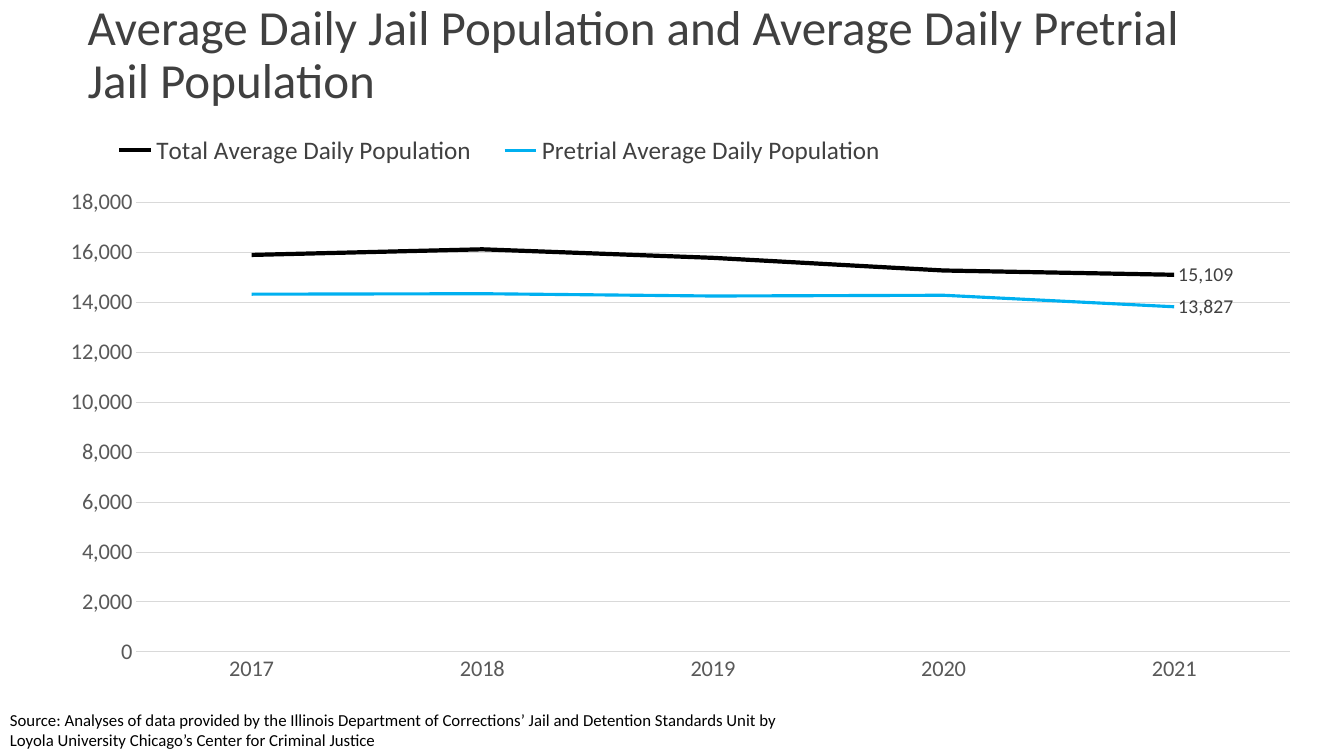
from lxml import etree
from pptx import Presentation
from pptx.chart.data import CategoryChartData
from pptx.dml.color import RGBColor
from pptx.enum.chart import (XL_CHART_TYPE as ChartType, XL_LABEL_POSITION as LabelPos,
                             XL_LEGEND_POSITION as LegendPos, XL_TICK_MARK as TickMark)
from pptx.enum.text import MSO_ANCHOR as Anchor
from pptx.oxml.ns import qn
from pptx.util import Inches, Pt

COLORS = {"black": "000000", "dark": "404040", "axis": "595959",
          "grid": "D9D9D9", "pretrial": "00B0F0"}
YEARS = ["2017", "2018", "2019", "2020", "2021"]
POPULATIONS = [
    ("Total Average Daily Population", (15904, 16129, 15788, 15280, 15109), "black", 3),
    ("Pretrial Average Daily Population", (14332, 14351, 14259, 14288, 13827), "pretrial", 2.25),
]


class SlideBuilder:
    def __init__(self, slide, font_name="Calibri"):
        self.slide = slide
        self.font_name = font_name

    def style_font(self, font, size, color):
        font.name = self.font_name
        font.size = Pt(size)
        font.color.rgb = RGBColor.from_string(COLORS[color])

    def style_line(self, line, color, width):
        line.color.rgb = RGBColor.from_string(COLORS[color])
        line.width = Pt(width)

    def text(self, box, lines, size, color, anchor=Anchor.TOP, wrap=True, spacing=None):
        frame = self.slide.shapes.add_textbox(*map(Inches, box)).text_frame
        frame.word_wrap = wrap
        frame.vertical_anchor = anchor
        frame.text = "\n".join(lines)
        for paragraph in frame.paragraphs:
            paragraph.line_spacing = spacing
            for run in paragraph.runs:
                self.style_font(run.font, size, color)

    def place(self, parent, box, inner=False):
        for previous in parent.findall(qn("c:layout")):
            parent.remove(previous)
        layout = etree.Element(qn("c:layout"))
        manual = etree.SubElement(layout, qn("c:manualLayout"))
        settings = [("layoutTarget", "inner")] if inner else []
        settings += [("xMode", "edge"), ("yMode", "edge")]
        settings += zip("xywh", box)
        for tag, value in settings:
            etree.SubElement(manual, qn(f"c:{tag}")).set("val", str(value))
        parent.insert(0 if inner else 1, layout)

    def line_chart(self, box, categories, series_rows, plot_box, legend_box):
        data = CategoryChartData(number_format="#,##0")
        data.categories = categories
        for name, values, _, _ in series_rows:
            data.add_series(name, values)
        chart = self.slide.shapes.add_chart(ChartType.LINE, *map(Inches, box), data).chart
        chart.has_title = False
        self.style_font(chart.font, 10, "black")
        self.style_axes(chart)
        chart.has_legend = True
        chart.legend.position = LegendPos.BOTTOM
        chart.legend.include_in_layout = False
        self.style_font(chart.legend.font, 18, "dark")
        self.place(chart.plots[0]._element.getparent(), plot_box, inner=True)
        self.place(chart.legend._element, legend_box)
        chart.plots[0].vary_by_categories = False
        for series, (_, values, color, width) in zip(chart.plots[0].series, series_rows):
            series.smooth = False
            self.style_line(series.format.line, color, width)
            last_label = series.points[len(values) - 1].data_label
            self.style_font(last_label.font, 14, "dark")
            last_label.position = LabelPos.RIGHT
            series.data_labels.show_value = False

    def style_axes(self, chart):
        years, counts = chart.category_axis, chart.value_axis
        for axis in (years, counts):
            axis.major_tick_mark = axis.minor_tick_mark = TickMark.NONE
            self.style_font(axis.tick_labels.font, 16, "axis")
        self.style_line(years.format.line, "grid", 0.75)
        counts.minimum_scale, counts.maximum_scale = 0, 18000
        counts.major_unit = 2000
        counts.tick_labels.number_format = "#,##0"
        counts.tick_labels.number_format_is_linked = False
        counts.format.line.fill.background()
        self.style_line(counts.major_gridlines.format.line, "grid", 0.75)


def main():
    deck = Presentation()
    deck.slide_width, deck.slide_height = Inches(13.33), Inches(7.5)
    builder = SlideBuilder(deck.slides.add_slide(deck.slide_layouts[6]))
    builder.text((0.77, -0.17, 11.5, 1.45),
                 ["Average Daily Jail Population and Average Daily Pretrial Jail Population"],
                 35, "dark", anchor=Anchor.MIDDLE, spacing=0.9)
    builder.line_chart((0.56, 1.28, 12.38, 6.04), YEARS, POPULATIONS,
                       plot_box=(0.064, 0.121, 0.924, 0.738),
                       legend_box=(0.03, 0, 0.65, 0.07))
    builder.text((0, 6.99, 7.92, 0.5),
                 ["Source: Analyses of data provided by the Illinois Department of Corrections’ "
                  "Jail and Detention Standards Unit by",
                  "Loyola University Chicago’s Center for Criminal Justice"],
                 12, "black", wrap=False)
    deck.save("out.pptx")


if __name__ == "__main__":
    main()
